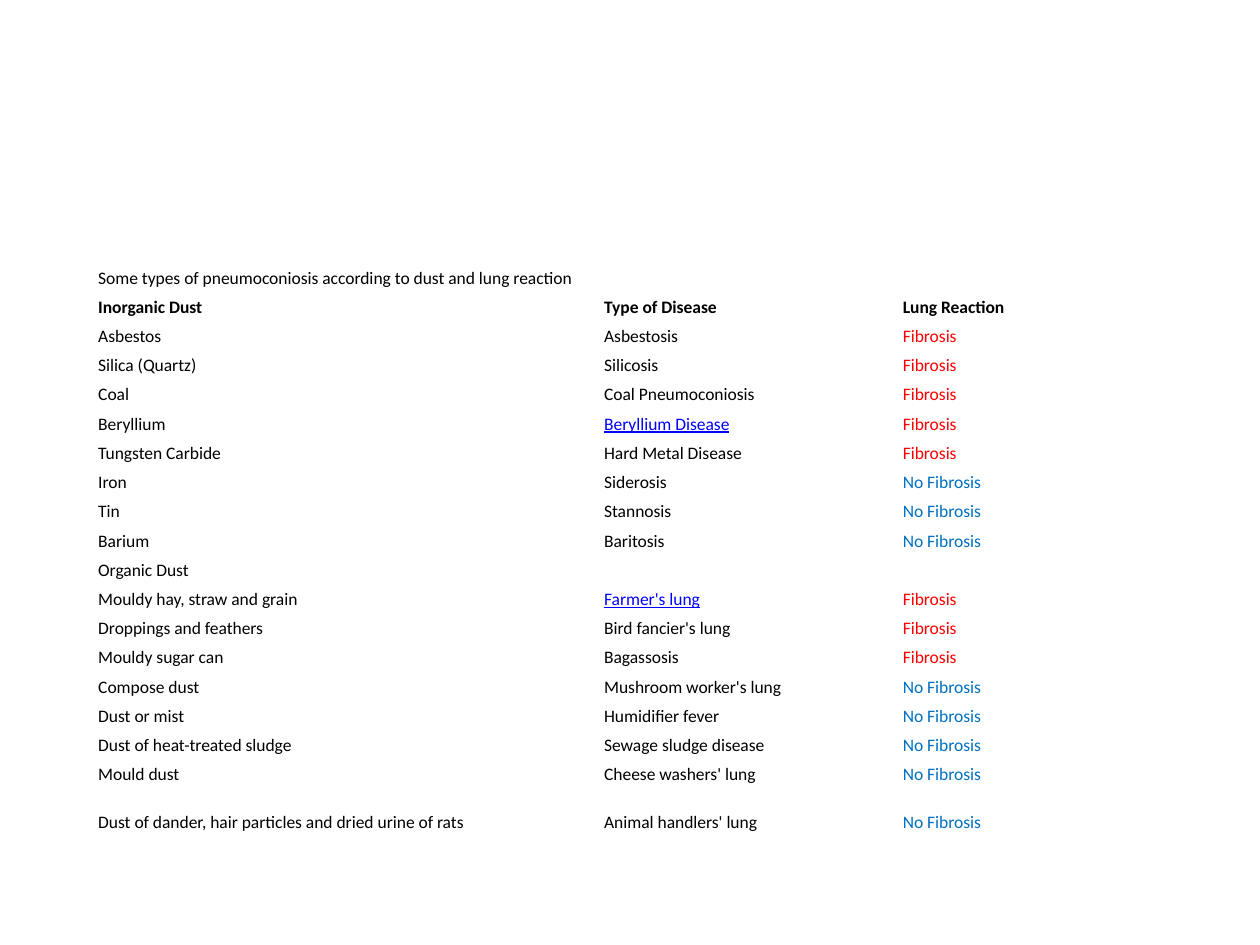
from pptx import Presentation
from pptx.dml.color import RGBColor
from pptx.enum.text import MSO_VERTICAL_ANCHOR as Anchor
from pptx.util import Cm, Pt

BLACK = RGBColor(0x00, 0x00, 0x00)
WHITE = RGBColor(0xFF, 0xFF, 0xFF)
RED = RGBColor(0xFF, 0x00, 0x00)
BLUE = RGBColor(0x00, 0x70, 0xC0)
LINK_BLUE = RGBColor(0x00, 0x00, 0xFF)

TITLE = "Some types of pneumoconiosis according to dust and lung reaction"
HEADINGS = ("Inorganic Dust", "Type of Disease", "Lung Reaction")
FIBROSIS, NO_FIBROSIS = "Fibrosis", "No Fibrosis"
DUSTS = [
    ("Asbestos", "Asbestosis", FIBROSIS),
    ("Silica (Quartz)", "Silicosis", FIBROSIS),
    ("Coal", "Coal Pneumoconiosis", FIBROSIS),
    ("Beryllium", "Beryllium Disease", FIBROSIS),
    ("Tungsten Carbide", "Hard Metal Disease", FIBROSIS),
    ("Iron", "Siderosis", NO_FIBROSIS),
    ("Tin", "Stannosis", NO_FIBROSIS),
    ("Barium", "Baritosis", NO_FIBROSIS),
    ("Organic Dust", "", ""),
    ("Mouldy hay, straw and grain", "Farmer's lung", FIBROSIS),
    ("Droppings and feathers", "Bird fancier's lung", FIBROSIS),
    ("Mouldy sugar can", "Bagassosis", FIBROSIS),
    ("Compose dust", "Mushroom worker's lung", NO_FIBROSIS),
    ("Dust or mist", "Humidifier fever", NO_FIBROSIS),
    ("Dust of heat-treated sludge", "Sewage sludge disease", NO_FIBROSIS),
    ("Mould dust", "Cheese washers' lung", NO_FIBROSIS),
    ("Dust of dander, hair particles and dried urine of rats",
     "Animal handlers' lung", NO_FIBROSIS),
]
LINKED_DISEASES = {"Beryllium Disease", "Farmer's lung"}
REACTION_COLORS = {FIBROSIS: RED, NO_FIBROSIS: BLUE}

COLUMN_WIDTHS = (10.2, 6.02, 6.02)
TITLE_HEIGHT, ROW_HEIGHT, LAST_HEIGHT = 1.0, 0.53, 1.32


def write(paragraph, text, *, font, size, color=BLACK, bold=False, underline=False):
    if not text:
        # An empty cell still needs the small size, or its row grows.
        paragraph._p.get_or_add_endParaRPr().set("sz", str(size * 100))
        return
    run = paragraph.add_run()
    run.text = text
    run.font.name = font
    run.font.size = Pt(size)
    run.font.color.rgb = color
    run.font.bold = bold
    run.font.underline = underline


class DustSlide:
    font = "Calibri"
    size = 10
    inset = Cm(0.08)

    def __init__(self, deck):
        self.slide = deck.slides.add_slide(deck.slide_layouts[6])

    def table(self, left, top, widths, heights):
        frame = self.slide.shapes.add_table(
            len(heights), len(widths), Cm(left), Cm(top),
            Cm(sum(widths)), Cm(sum(heights)))
        table = frame.table
        table.first_row = table.horz_banding = False
        for column, width in zip(table.columns, widths):
            column.width = Cm(width)
        for row, height in zip(table.rows, heights):
            row.height = Cm(height)
        return table

    def cell(self, cell, text, anchor=Anchor.MIDDLE, **style):
        cell.fill.solid()
        cell.fill.fore_color.rgb = WHITE
        cell.margin_left = cell.margin_right = self.inset
        cell.margin_top = cell.margin_bottom = self.inset
        cell.vertical_anchor = anchor
        write(cell.text_frame.paragraphs[0], text,
              font=self.font, size=self.size, **style)


def main():
    deck = Presentation()
    deck.slide_width, deck.slide_height = Cm(25.4), Cm(19.05)
    page = DustSlide(deck)

    heights = [TITLE_HEIGHT] + [ROW_HEIGHT] * len(DUSTS) + [LAST_HEIGHT]
    reactions = page.table(1.9, 4.9, COLUMN_WIDTHS, heights)

    title = reactions.cell(0, 0)
    title.merge(reactions.cell(0, len(HEADINGS) - 1))
    page.cell(title, TITLE, anchor=Anchor.BOTTOM)

    for column, heading in enumerate(HEADINGS):
        page.cell(reactions.cell(1, column), heading, bold=True)

    for row, (dust, disease, reaction) in enumerate(DUSTS, start=2):
        linked = disease in LINKED_DISEASES
        page.cell(reactions.cell(row, 0), dust)
        page.cell(reactions.cell(row, 1), disease,
                  color=LINK_BLUE if linked else BLACK, underline=linked)
        page.cell(reactions.cell(row, 2), reaction,
                  color=REACTION_COLORS.get(reaction, BLACK))

    deck.save("out.pptx")


if __name__ == "__main__":
    main()
